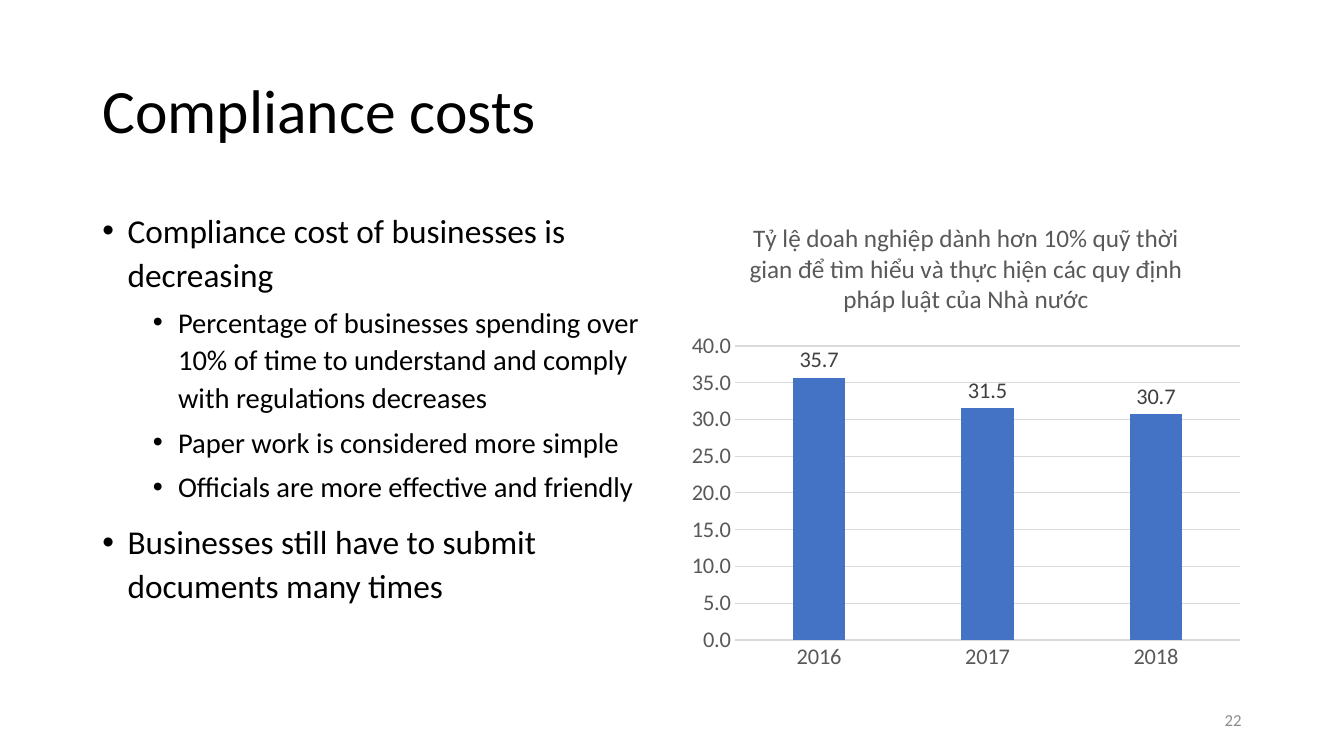
from lxml import etree
from pptx import Presentation
from pptx.chart.data import CategoryChartData
from pptx.dml.color import RGBColor
from pptx.enum.chart import XL_CHART_TYPE as ChartType, XL_LABEL_POSITION as LabelPosition
from pptx.enum.chart import XL_TICK_MARK as TickMark
from pptx.enum.text import MSO_ANCHOR as Anchor, MSO_AUTO_SIZE as AutoSize, PP_ALIGN as Align
from pptx.oxml.ns import qn
from pptx.util import Pt

FONT = "Calibri"
COLORS = {
    "text": "000000",
    "number": "8C8C8C",
    "axis": "595959",
    "label": "404040",
    "grid": "D9D9D9",
    "bar": "4472C4",
}
LEVELS = [
    {"size": 23.8, "margin": 18, "before": 10},
    {"size": 20.4, "margin": 54, "before": 5},
]
HANGING = 18
BULLETS = [
    (0, "Compliance cost of businesses is decreasing"),
    (1, "Percentage of businesses spending over 10% of time to understand "
        "and comply with regulations decreases"),
    (1, "Paper work is considered more simple"),
    (1, "Officials are more effective and friendly"),
    (0, "Businesses still have to submit documents many times"),
]
CHART_TITLE = ("Tỷ lệ doah nghiệp dành hơn 10% quỹ thời gian để tìm hiểu "
               "và thực hiện các quy định pháp luật của Nhà nước")
SHARES = {"2016": 35.7, "2017": 31.5, "2018": 30.7}


def set_all(target, **values):
    for name, value in values.items():
        setattr(target, name, value)


def color(name):
    return RGBColor.from_string(COLORS[name])


def style_font(font, size, color_name):
    set_all(font, name=FONT, size=Pt(size), bold=False)
    font.color.rgb = color(color_name)


def style_line(line, color_name):
    line.color.rgb = color(color_name)
    line.width = Pt(0.75)


def place(box, left, top, width, height):
    set_all(box, left=Pt(left), top=Pt(top), width=Pt(width), height=Pt(height))


def add_span(para, text, size, color_name):
    span = para.add_run()
    span.text = text
    style_font(span.font, size, color_name)


def write_line(box, text, size, color_name, align):
    set_all(box.text_frame, word_wrap=True, auto_size=AutoSize.NONE,
            vertical_anchor=Anchor.MIDDLE)
    para = box.text_frame.paragraphs[0]
    set_all(para, alignment=align, line_spacing=0.9)
    add_span(para, text, size, color_name)


def write_bullets(box, items):
    frame = box.text_frame
    set_all(frame, word_wrap=True, auto_size=AutoSize.NONE, vertical_anchor=Anchor.TOP)
    for index, (level, text) in enumerate(items):
        para = frame.add_paragraph() if index else frame.paragraphs[0]
        style = LEVELS[level]
        before = style["before"] if index else 0
        set_all(para, level=level, line_spacing=1.1, space_before=Pt(before))
        properties = para._p.get_or_add_pPr()
        properties.set("marL", str(Pt(style["margin"])))
        properties.set("indent", str(-Pt(HANGING)))
        etree.SubElement(properties, qn("a:buFont")).set("typeface", "Arial")
        etree.SubElement(properties, qn("a:buChar")).set("char", "•")
        add_span(para, text, style["size"], "text")


def style_axes(chart):
    for axis in (chart.category_axis, chart.value_axis):
        set_all(axis, major_tick_mark=TickMark.NONE, minor_tick_mark=TickMark.NONE)
        style_font(axis.tick_labels.font, 16, "axis")
    style_line(chart.category_axis.format.line, "grid")
    values = chart.value_axis
    set_all(values, minimum_scale=0, maximum_scale=40, major_unit=5)
    set_all(values.tick_labels, number_format="0.0", number_format_is_linked=False)
    values.format.line.fill.background()
    style_line(values.major_gridlines.format.line, "grid")


def style_bars(plot):
    set_all(plot, gap_width=219, overlap=-27, vary_by_categories=False,
            has_data_labels=True)
    fill = plot.series[0].format.fill
    fill.solid()
    fill.fore_color.rgb = color("bar")
    set_all(plot.data_labels, show_value=True, number_format="0.0",
            number_format_is_linked=False, position=LabelPosition.OUTSIDE_END)
    style_font(plot.data_labels.font, 16, "label")


def add_column_chart(page, left, top, width, height):
    data = CategoryChartData(number_format="0.0")
    data.categories = list(SHARES)
    data.add_series(CHART_TITLE, list(SHARES.values()))
    chart = page.shapes.add_chart(ChartType.COLUMN_CLUSTERED, Pt(left), Pt(top),
                                  Pt(width), Pt(height), data).chart
    style_font(chart.font, 10, "text")
    set_all(chart, has_legend=False, has_title=True)
    para = chart.chart_title.text_frame.paragraphs[0]
    add_span(para, CHART_TITLE, 18, "axis")
    chart.chart_title.include_in_layout = False
    style_axes(chart)
    style_bars(chart.plots[0])


def main():
    deck = Presentation()
    set_all(deck, slide_width=Pt(960), slide_height=Pt(540))
    page = deck.slides.add_slide(deck.slide_layouts[1])
    title, body = page.placeholders
    place(title, 66, 28.75, 828, 104.38)
    write_line(title, "Compliance costs", 44, "text", Align.LEFT)
    place(body, 66, 143.75, 408, 342.62)
    write_bullets(body, BULLETS)
    number = page.shapes.add_textbox(Pt(678), Pt(500.5), Pt(216), Pt(28.75))
    write_line(number, "22", 12, "number", Align.RIGHT)
    add_column_chart(page, 486, 143.75, 408, 342.62)
    deck.save("out.pptx")


if __name__ == "__main__":
    main()
